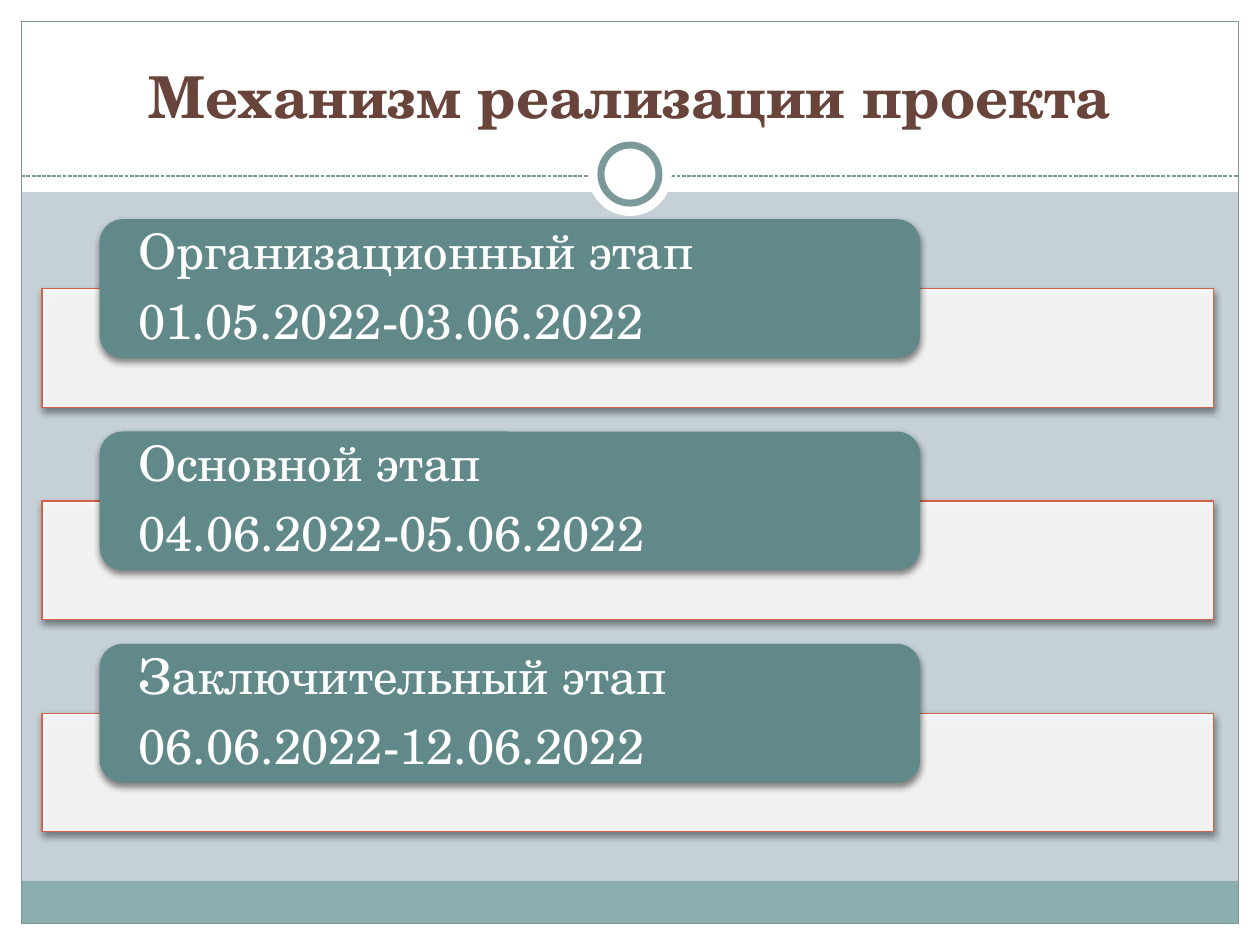
from lxml import etree
from pptx import Presentation
from pptx import util as u
from pptx.dml.color import RGBColor
from pptx.enum import dml, shapes, text
from pptx.oxml.ns import qn

WHITE, TEAL, CARD, BROWN, RUST = "FFFFFF", "7C999A", "61898A", "68443A", "D16349"
WIDTH, HEIGHT, MARGIN = 25.4, 19.05, 0.43
FONT = "TeX Gyre Schola"


def colour(value):
    return RGBColor.from_string(value)


def write(frame, content, size, ink, bold=False, align=text.PP_ALIGN.LEFT,
          anchor=text.MSO_ANCHOR.MIDDLE, inset=0.25, spacing=1.0, after=0):
    frame.word_wrap = True
    frame.vertical_anchor = anchor
    frame.margin_left = frame.margin_right = u.Cm(inset)
    frame.margin_top = frame.margin_bottom = u.Cm(0.13)
    for index, line in enumerate(content):
        paragraph = frame.add_paragraph() if index else frame.paragraphs[0]
        paragraph.alignment = align
        paragraph.line_spacing = spacing
        paragraph.space_after = u.Pt(after)
        run = paragraph.add_run()
        run.text = line
        run.font.name = FONT
        run.font.size = u.Pt(size)
        run.font.bold = bold
        run.font.color.rgb = colour(ink)


class Slide:
    def __init__(self, deck, background):
        self.slide = deck.slides.add_slide(deck.slide_layouts[6])
        self.slide.background.fill.solid()
        self.slide.background.fill.fore_color.rgb = colour(background)

    def shape(self, kind, left, top, width, height, fill=None, line=None,
              weight=0.75, opacity=100, shadow=False):
        item = self.slide.shapes.add_shape(
            kind, u.Cm(left), u.Cm(top), u.Cm(width), u.Cm(height))
        if fill:
            item.fill.solid()
            item.fill.fore_color.rgb = colour(fill)
        else:
            item.fill.background()
        if line:
            item.line.color.rgb = colour(line)
            item.line.width = u.Pt(weight)
        else:
            item.line.fill.background()
        item.shadow.inherit = False
        properties = item.element.spPr
        if opacity < 100:
            tint = properties.find(qn("a:solidFill"))[0]
            etree.SubElement(tint, qn("a:alpha"), val=str(opacity * 1000))
        if shadow:
            cast = etree.SubElement(
                properties.find(qn("a:effectLst")), qn("a:outerShdw"),
                blurRad=str(u.Pt(4)), dist=str(u.Pt(2)), dir="5400000", rotWithShape="0")
            black = etree.SubElement(cast, qn("a:srgbClr"), val="000000")
            etree.SubElement(black, qn("a:alpha"), val="45000")
        return item

    def rectangle(self, *place, **style):
        return self.shape(shapes.MSO_SHAPE.RECTANGLE, *place, **style)

    def circle(self, x, y, size, **style):
        return self.shape(shapes.MSO_SHAPE.OVAL, x - size / 2, y - size / 2, size, size, **style)

    def dashes(self, left, right, y, ink):
        rule = self.slide.shapes.add_connector(
            shapes.MSO_CONNECTOR.STRAIGHT, u.Cm(left), u.Cm(y), u.Cm(right), u.Cm(y))
        rule.line.color.rgb = colour(ink)
        rule.line.width = u.Pt(0.75)
        rule.line.dash_style = dml.MSO_LINE.SQUARE_DOT
        etree.SubElement(rule.element.spPr, qn("a:effectLst"))

    def title(self, content):
        box = self.slide.shapes.add_textbox(u.Cm(0.85), u.Cm(0.64), u.Cm(23.7), u.Cm(2.12))
        write(box.text_frame, [content], 33, BROWN, bold=True,
              align=text.PP_ALIGN.CENTER, anchor=text.MSO_ANCHOR.BOTTOM)

    def stage(self, top, name, dates):
        self.rectangle(0.85, top + 1.4, 23.62, 2.39, fill=WHITE, line=RUST,
                       opacity=90, shadow=True)
        card = self.shape(shapes.MSO_SHAPE.ROUNDED_RECTANGLE, 2.01, top, 16.54, 2.8,
                          fill=CARD, shadow=True)
        write(card.text_frame, [name, dates], 28, WHITE, inset=0.64, spacing=0.9, after=9.8)


def main():
    deck = Presentation()
    deck.slide_width, deck.slide_height = u.Cm(WIDTH), u.Cm(HEIGHT)
    page = Slide(deck, "C5D1D7")
    inner_width, inner_height = WIDTH - 2 * MARGIN, HEIGHT - 2 * MARGIN

    page.rectangle(0, HEIGHT - MARGIN, WIDTH, MARGIN, fill=WHITE)
    page.rectangle(0, 0, WIDTH, 3.87, fill=WHITE)
    for edge in (0, WIDTH - MARGIN):
        page.rectangle(edge, 0, MARGIN, HEIGHT, fill=WHITE)
    page.rectangle(MARGIN, 17.76, inner_width, 0.86, fill="8CADAE")
    page.rectangle(MARGIN, MARGIN, inner_width, inner_height, line=TEAL)
    page.dashes(MARGIN, WIDTH - MARGIN, 3.55, TEAL)
    page.circle(WIDTH / 2, 3.51, 1.69, fill=WHITE)
    page.circle(WIDTH / 2, 3.51, 1.17, fill=WHITE, line=TEAL, weight=4)
    page.title("Механизм реализации проекта")

    stages = [
        ("Организационный этап", "01.05.2022-03.06.2022"),
        ("Основной этап", "04.06.2022-05.06.2022"),
        ("Заключительный этап", "06.06.2022-12.06.2022"),
    ]
    for index, (name, dates) in enumerate(stages):
        page.stage(4.42 + index * 4.28, name, dates)

    deck.save("out.pptx")


if __name__ == "__main__":
    main()
